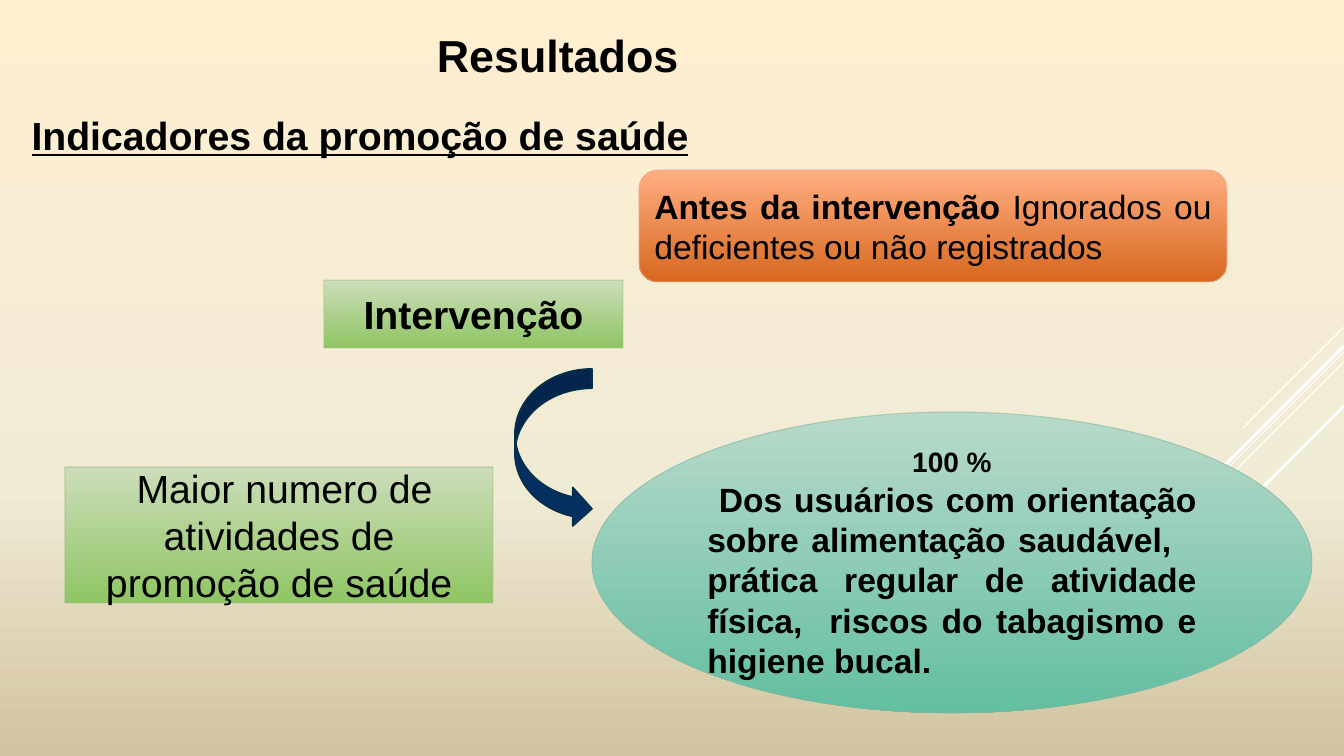
from copy import deepcopy
from pptx import Presentation
from pptx.dml.color import RGBColor as RGB
from pptx.enum.shapes import MSO_CONNECTOR as CONN, MSO_SHAPE as SHAPE
from pptx.enum.text import MSO_ANCHOR as ANCHOR, PP_ALIGN as ALIGN
from pptx.oxml import parse_xml
from pptx.oxml.ns import nsdecls, qn
from pptx.util import Pt

COLORS = {
    "ink": "000000", "white": "FFFFFF", "navy": "052F61", "edge": "043148",
    "cream": "FFEFD1", "ivory": "F0EBD5", "sand": "D1C39F",
    "peach": "FFAE82", "rust": "D7681F", "coral": "EEA78F",
    "mint": "B9DACA", "teal": "63BEA2", "sage": "8AB7A1",
    "pale": "CCDDBA", "leaf": "8FC563", "moss": "A4BB8B",
}
BACK = [(0, "cream"), (0.65, "ivory"), (1, "sand")]
GREEN = ("pale", "leaf", "moss")
RAYS = [(327, 101, 0.75), (352, 329, 0.75), (362, 209, 0.75),
        (346, 192, 2.25), (406, 140, 2.25)]
LABELS = [
    ((427, 23, 299, 65), ANCHOR.TOP, [(ALIGN.LEFT, [("Resultados", 32, True, False)])]),
    ((0, 88, 720, 94), ANCHOR.MIDDLE,
     [(ALIGN.CENTER, [("Indicadores da promoção de saúde", 28, True, True)])]),
]
BOXES = [
    (SHAPE.ROUNDED_RECTANGLE, (639, 170, 588, 112), ("peach", "rust", "coral"),
     [(ALIGN.JUSTIFY, [("Antes da intervenção ", 24, True, False),
                       ("Ignorados ou deficientes ou não registrados", 24, False, False)])]),
    (SHAPE.OVAL, (592, 412, 720, 301), ("mint", "teal", "sage"),
     [(ALIGN.CENTER, [("100 %", 20, True, False)]),
      (ALIGN.JUSTIFY, [(" Dos usuários com orientação sobre alimentação saudável,   "
                        "prática regular de atividade física,  riscos do tabagismo "
                        "e higiene bucal.", 24, True, False)])]),
    (SHAPE.RECTANGLE, (65, 467, 428, 136), GREEN,
     [(ALIGN.CENTER, [(" Maior numero de atividades de promoção de saúde", 28, False, False)])]),
    (SHAPE.RECTANGLE, (324, 280, 299, 68), GREEN,
     [(ALIGN.CENTER, [("Intervenção", 28, True, False)])]),
]
ARROW = (515, 369, 77, 159)
WIDE, HIGH = 1344, 756
SCALE = 12192000 / WIDE


def emu(*lengths):
    return [round(n * SCALE) for n in lengths]


def tint(name):
    return RGB.from_string(COLORS[name])


def shade(fill, node, stops):
    fill.gradient()
    fill.gradient_angle = 270
    bands = next(node.iter(qn("a:gsLst")))
    while len(bands) < len(stops):
        bands.append(deepcopy(bands[-1]))
    for stop, (place, name) in zip(fill.gradient_stops, stops):
        stop.position = place
        stop.color.rgb = tint(name)


def write(shape, anchor, paras):
    frame = shape.text_frame
    frame.word_wrap = True
    frame.vertical_anchor = anchor
    for i, (align, runs) in enumerate(paras):
        para = frame.add_paragraph() if i else frame.paragraphs[0]
        para.alignment = align
        for text, size, bold, under in runs:
            run = para.add_run()
            run.text = text
            font = run.font
            font.name, font.size = "Arial", Pt(size)
            font.bold, font.underline = bold, under
            font.color.rgb = tint("ink")


def stroke(line, name, width):
    line.color.rgb = tint(name)
    line.width = Pt(width)


deck = Presentation()
deck.slide_width, deck.slide_height = emu(WIDE, HIGH)
slide = deck.slides.add_slide(deck.slide_layouts[6])
shapes = slide.shapes
shade(slide.background.fill, slide._element, BACK)

for top, run, width in RAYS:
    ray = shapes.add_connector(CONN.STRAIGHT, *emu(WIDE, top, WIDE - run, top + run))
    stroke(ray.line, "white", width)
    ray._element.spPr.append(parse_xml(f"<a:effectLst {nsdecls('a')}/>"))

for place, anchor, paras in LABELS:
    write(shapes.add_textbox(*emu(*place)), anchor, paras)

for kind, place, (light, deep, rim), paras in BOXES:
    box = shapes.add_shape(kind, *emu(*place))
    box.shadow.inherit = False
    shade(box.fill, box._element, [(0, light), (1, deep)])
    stroke(box.line, rim, 0.75)
    color = box._element.spPr.find(qn("a:ln")).find(".//" + qn("a:srgbClr"))
    color.append(parse_xml(f'<a:alpha {nsdecls("a")} val="60000"/>'))
    write(box, ANCHOR.MIDDLE, paras)

arrow = shapes.add_shape(SHAPE.CURVED_RIGHT_ARROW, *emu(*ARROW))
arrow.shadow.inherit = False
arrow.fill.solid()
arrow.fill.fore_color.rgb = tint("navy")
stroke(arrow.line, "edge", 1.25)

deck.save("out.pptx")
